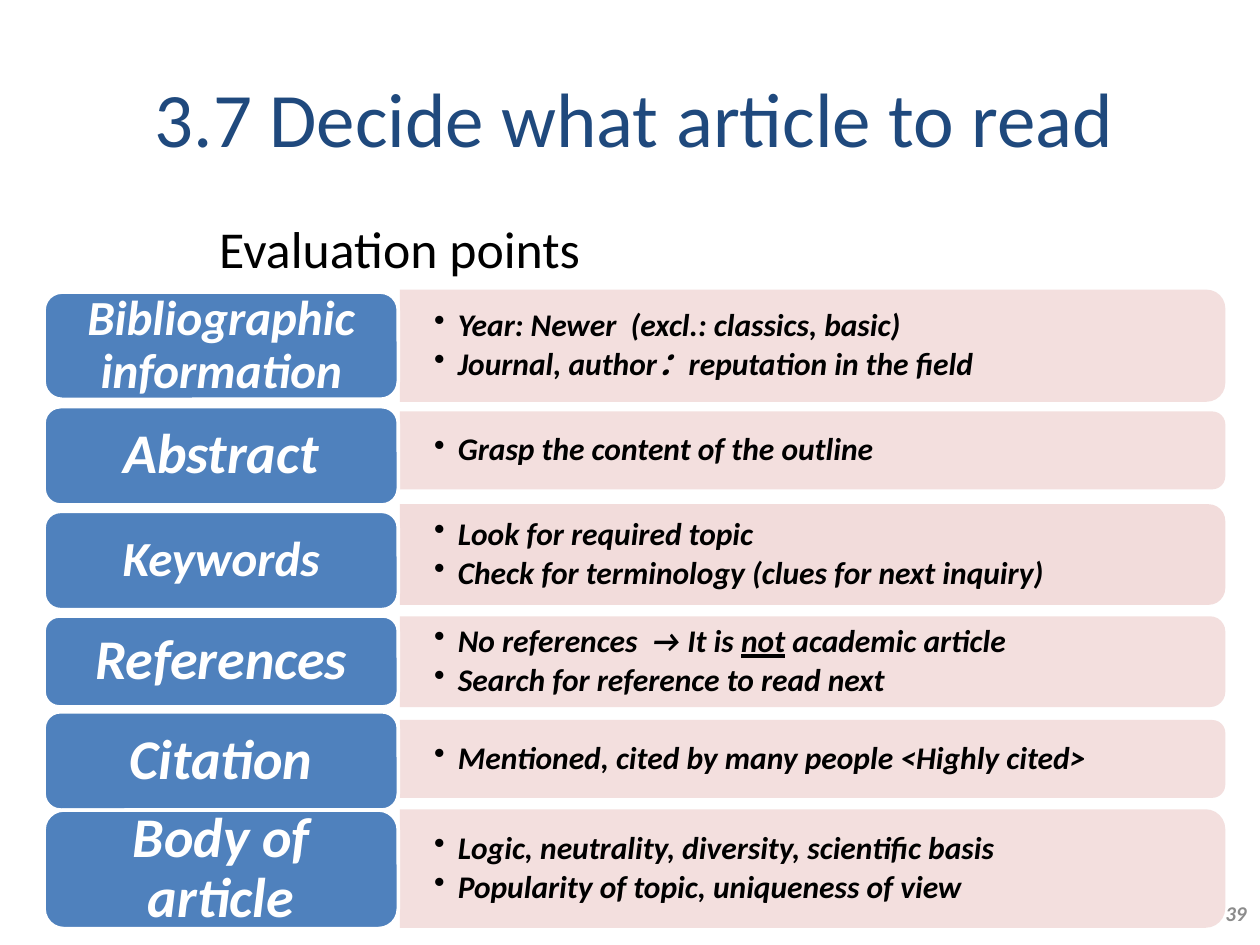
from lxml import etree
from pptx import Presentation
from pptx.dml.color import RGBColor
from pptx.enum.shapes import MSO_SHAPE
from pptx.enum.text import MSO_ANCHOR, PP_ALIGN
from pptx.oxml.ns import qn
from pptx.util import Cm, Pt

ROUNDED = MSO_SHAPE.ROUNDED_RECTANGLE
ROUNDED_TOP = MSO_SHAPE.ROUND_2_SAME_RECTANGLE
MIDDLE, TOP = MSO_ANCHOR.MIDDLE, MSO_ANCHOR.TOP
LEFT, CENTER, RIGHT = PP_ALIGN.LEFT, PP_ALIGN.CENTER, PP_ALIGN.RIGHT

FONT = "Calibri"
COLORS = {
    "title": "1F497D",
    "text": "000000",
    "label": "4F81BD",
    "panel": "F2DCDB",
    "white": "FFFFFF",
    "number": "8C8C8C",
}
LABEL_LEFT, LABEL_WIDTH = 0.89, 7.14
PANEL_LEFT, PANEL_WIDTH = 8.06, 16.64

# label, size, label top, label height, panel middle, panel height, opacity, points
CRITERIA = [
    ("Bibliographic information", 28, 5.89, 2.16, 6.97, 2.26, 90,
     ["Year: Newer  (excl.: classics, basic)",
      "Journal, author：reputation in the field"]),
    ("Abstract", 32, 8.2, 1.98, 9.08, 1.57, 90,
     ["Grasp the content of the outline"]),
    ("Keywords", 28, 10.31, 1.98, 11.18, 2.03, 100,
     ["Look for required topic",
      "Check for terminology (clues for next inquiry)"]),
    ("References", 32, 12.42, 1.83, 13.34, 1.83, 90,
     ["No references  → It is _not_ academic article",
      "Search for reference to read next"]),
    ("Citation", 32, 14.35, 1.98, 15.3, 1.57, 90,
     ["Mentioned, cited by many people <Highly cited>"]),
    ("Body of article", 32, 16.33, 2.39, 17.51, 2.39, 90,
     ["Logic, neutrality, diversity, scientific basis",
      "Popularity of topic, uniqueness of view"]),
]


def rgb(name):
    return RGBColor.from_string(COLORS[name])


def format_runs(paragraph, size, color, emphasis=False):
    for run in paragraph.runs:
        run.font.name = FONT
        run.font.size = Pt(size)
        run.font.color.rgb = rgb(color)
        run.font.bold = run.font.italic = emphasis


def set_frame(frame, anchor, side, vertical):
    frame.word_wrap = True
    frame.vertical_anchor = anchor
    frame.margin_left = frame.margin_right = Cm(side)
    frame.margin_top = frame.margin_bottom = Cm(vertical)


def write_line(frame, text, size, color, align, anchor, emphasis=False):
    set_frame(frame, anchor, 0.25, 0.13)
    frame.text = text
    frame.paragraphs[0].alignment = align
    format_runs(frame.paragraphs[0], size, color, emphasis)


def add_line(slide, box, *style):
    frame = slide.shapes.add_textbox(*map(Cm, box)).text_frame
    write_line(frame, *style)


def add_panel(slide, middle, height, opacity):
    left = PANEL_LEFT + (PANEL_WIDTH - height) / 2
    panel = slide.shapes.add_shape(
        ROUNDED_TOP, Cm(left), Cm(middle - PANEL_WIDTH / 2), Cm(height), Cm(PANEL_WIDTH))
    panel.rotation = 90
    panel.shadow.inherit = False
    panel.fill.solid()
    panel.fill.fore_color.rgb = rgb("panel")
    panel.line.fill.background()
    if opacity < 100:
        fill_color = panel.fill._xPr.find(qn("a:solidFill"))[0]
        etree.SubElement(fill_color, qn("a:alpha"), val=str(opacity * 1000))


def add_bullet(paragraph):
    properties = paragraph._p.get_or_add_pPr()
    properties.set("marL", str(Cm(0.48)))
    properties.set("indent", str(-Cm(0.48)))
    etree.SubElement(properties, qn("a:buChar"), char="•")


def add_points(slide, middle, panel_height, points):
    height = 0.9 * panel_height
    frame = slide.shapes.add_textbox(
        Cm(PANEL_LEFT), Cm(middle - height / 2), Cm(PANEL_WIDTH - 0.1), Cm(height)).text_frame
    set_frame(frame, MIDDLE, 0.69, 0.36)
    for index, point in enumerate(points):
        paragraph = frame.add_paragraph() if index else frame.paragraphs[0]
        for part, text in enumerate(point.split("_")):
            run = paragraph.add_run()
            run.text = text
            run.font.underline = part % 2 == 1
        paragraph.line_spacing = 0.9
        paragraph.space_after = Pt(2.7)
        add_bullet(paragraph)
        format_runs(paragraph, 18, "text", True)


def add_label(slide, text, size, top, height):
    label = slide.shapes.add_shape(
        ROUNDED, Cm(LABEL_LEFT), Cm(top), Cm(LABEL_WIDTH), Cm(height))
    label.shadow.inherit = False
    label.fill.solid()
    label.fill.fore_color.rgb = rgb("label")
    label.line.color.rgb = rgb("white")
    label.line.width = Pt(2)
    write_line(label.text_frame, text, size, "white", CENTER, MIDDLE, True)
    set_frame(label.text_frame, MIDDLE, 0.33, 0.17)
    label.text_frame.paragraphs[0].line_spacing = 0.9


def add_title(slide, text):
    title = slide.shapes.title
    title.left, title.top, title.width, title.height = map(Cm, (0.69, 0.76, 24.21, 3.18))
    write_line(title.text_frame, text, 44, "title", CENTER, MIDDLE)


def main():
    deck = Presentation()
    deck.slide_width, deck.slide_height = Cm(25.4), Cm(19.05)
    slide = deck.slides.add_slide(deck.slide_layouts[5])
    add_title(slide, "3.7 Decide what article to read")
    add_line(slide, (4.17, 4.24, 11.91, 1.5),
             "Evaluation points", 29.6, "text", LEFT, TOP)
    for name, size, top, height, middle, panel_height, opacity, points in CRITERIA:
        add_panel(slide, middle, panel_height, opacity)
        add_points(slide, middle, panel_height, points)
        add_label(slide, name, size, top, height)
    add_line(slide, (23.75, 17.78, 1.63, 1.27), "39", 12, "number", RIGHT, MIDDLE, True)
    deck.save("out.pptx")


if __name__ == "__main__":
    main()
